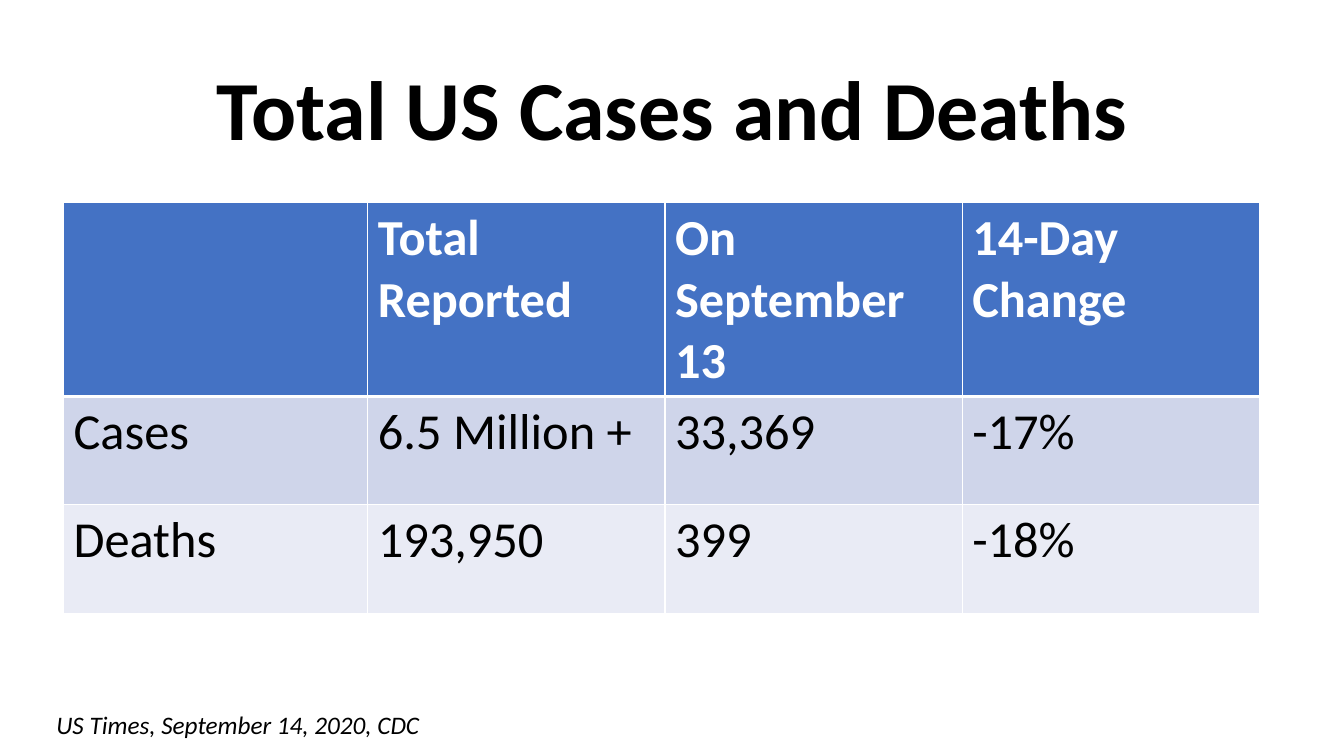
from dataclasses import dataclass

from lxml import etree
from pptx import Presentation
from pptx.dml.color import RGBColor
from pptx.enum.text import MSO_ANCHOR, PP_ALIGN
from pptx.oxml.ns import qn
from pptx.util import Cm, Pt

CENTER = PP_ALIGN.CENTER
LEFT = PP_ALIGN.LEFT
MIDDLE = MSO_ANCHOR.MIDDLE
TOP = MSO_ANCHOR.TOP


@dataclass(frozen=True)
class Theme:
    font: str = "Calibri"
    ink: str = "000000"
    light: str = "FFFFFF"
    header_fill: str = "4472C4"
    band_fills: tuple = ("CFD5EA", "E9EBF5")
    title_size: int = 60
    table_size: int = 36
    source_size: int = 18
    rule: int = 1
    header_rule: int = 3


@dataclass(frozen=True)
class Box:
    left: float
    top: float
    width: float
    height: float

    def lengths(self):
        return Cm(self.left), Cm(self.top), Cm(self.width), Cm(self.height)


THEME = Theme()
ROWS = [
    ["", "Total Reported", "On September 13", "14-Day Change"],
    ["Cases", "6.5 Million +", "33,369", "-17%"],
    ["Deaths", "193,950", "399", "-18%"],
]


def style_text(frame, size, color, bold=False, italic=False):
    for para in frame.paragraphs:
        for span in para.runs:
            span.font.name = THEME.font
            span.font.size = Pt(size)
            span.font.bold = bold
            span.font.italic = italic
            span.font.color.rgb = RGBColor.from_string(color)


def add_text(page, box, text, size, align=LEFT, anchor=TOP, spacing=1.0,
             bold=False, italic=False):
    frame = page.shapes.add_textbox(*box.lengths()).text_frame
    frame.word_wrap = True
    frame.vertical_anchor = anchor
    frame.text = text
    frame.paragraphs[0].alignment = align
    frame.paragraphs[0].line_spacing = spacing
    style_text(frame, size, THEME.ink, bold, italic)


def set_borders(cell, top, bottom):
    properties = cell._tc.get_or_add_tcPr()
    widths = {"a:lnL": THEME.rule, "a:lnR": THEME.rule, "a:lnT": top, "a:lnB": bottom}
    for index, (tag, width) in enumerate(widths.items()):
        line = etree.Element(qn(tag), w=str(Pt(width)))
        fill = etree.SubElement(line, qn("a:solidFill"))
        etree.SubElement(fill, qn("a:srgbClr"), val=THEME.light)
        properties.insert(index, line)


def add_title(page, box):
    add_text(page, box, "Total US Cases and Deaths", THEME.title_size,
             align=CENTER, anchor=MIDDLE, spacing=0.9, bold=True)


def add_case_table(page, box):
    label_width, header_height = 7.67, 4.89
    value_width = (box.width - label_width) / (len(ROWS[0]) - 1)
    body_height = (box.height - header_height) / (len(ROWS) - 1)
    table = page.shapes.add_table(len(ROWS), len(ROWS[0]), *box.lengths()).table
    for index, column in enumerate(table.columns):
        column.width = Cm(value_width if index else label_width)
    fills = (THEME.header_fill, *THEME.band_fills)
    for row_index, (values, fill) in enumerate(zip(ROWS, fills)):
        header = row_index == 0
        table.rows[row_index].height = Cm(header_height if header else body_height)
        top = THEME.header_rule if row_index == 1 else THEME.rule
        bottom = THEME.header_rule if header else THEME.rule
        for column_index, value in enumerate(values):
            cell = table.cell(row_index, column_index)
            cell.fill.solid()
            cell.fill.fore_color.rgb = RGBColor.from_string(fill)
            set_borders(cell, top, bottom)
            cell.text_frame.text = value
            style_text(cell.text_frame, THEME.table_size,
                       THEME.light if header else THEME.ink, bold=header)


def add_source(page, box):
    add_text(page, box, "US Times, September 14, 2020, CDC",
             THEME.source_size, italic=True)


def main():
    deck = Presentation()
    deck.slide_width = Cm(33.87)
    deck.slide_height = Cm(19.05)
    page = deck.slides.add_slide(deck.slide_layouts[6])
    add_title(page, Box(2.34, 1.02, 29.21, 3.68))
    add_case_table(page, Box(1.6, 5.1, 30.14, 10.35))
    add_source(page, Box(1.17, 17.75, 16.94, 1.02))
    deck.save("out.pptx")


if __name__ == "__main__":
    main()
